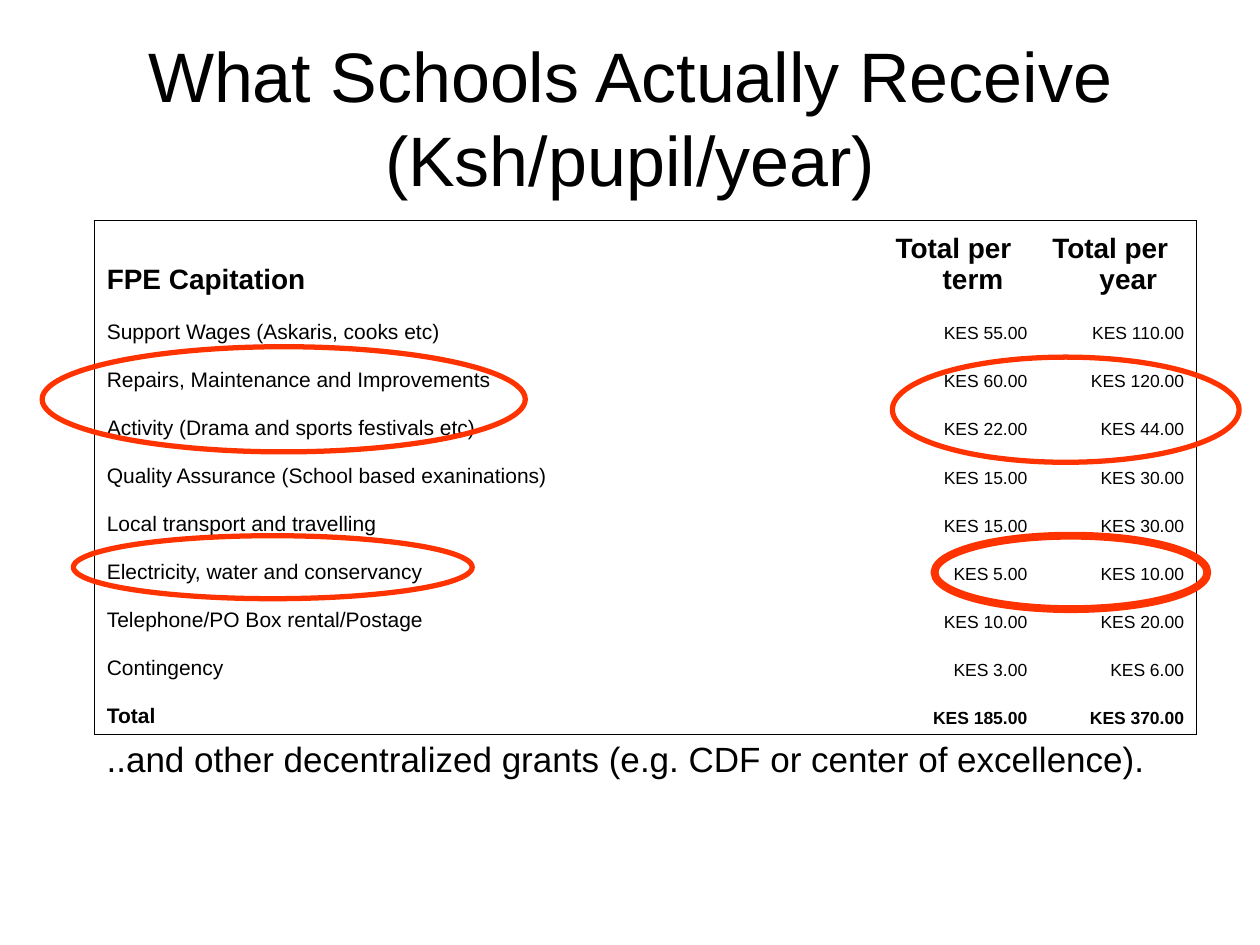
from lxml import etree
from pptx import Presentation
from pptx.dml.color import RGBColor
from pptx.enum.shapes import MSO_SHAPE
from pptx.enum.text import MSO_ANCHOR, PP_ALIGN
from pptx.oxml.ns import qn
from pptx.util import Cm, Pt

ELLIPSE = MSO_SHAPE.OVAL
LEFT, CENTER, RIGHT = PP_ALIGN.LEFT, PP_ALIGN.CENTER, PP_ALIGN.RIGHT
MIDDLE, BOTTOM = MSO_ANCHOR.MIDDLE, MSO_ANCHOR.BOTTOM

FONT = "Arial"
BLACK = "000000"
RED = "FF3300"
TITLE = "What Schools Actually Receive (Ksh/pupil/year)"
NOTE = "..and other decentralized grants (e.g. CDF or center of excellence)."
HEADER = ("FPE Capitation", "Total per term", "Total per year")
CAPITATION = [
    ("Support Wages (Askaris, cooks etc)", 55, 110),
    ("Repairs, Maintenance and Improvements", 60, 120),
    ("Activity (Drama and sports festivals etc)", 22, 44),
    ("Quality Assurance (School based exaninations)", 15, 30),
    ("Local transport and travelling", 15, 30),
    ("Electricity, water and conservancy", 5, 10),
    ("Telephone/PO Box rental/Postage", 10, 20),
    ("Contingency", 3, 6),
    ("Total", 185, 370),
]
HIGHLIGHTS = [
    (0.85, 6.99, 9.74, 2.12, 3),
    (17.99, 7.2, 6.99, 2.12, 3),
    (1.48, 10.8, 8.04, 1.27, 3),
    (18.84, 10.8, 5.5, 1.48, 4.5),
]
COLUMN_WIDTHS = (15.9, 3.16, 3.16)
HEADER_HEIGHT, ROW_HEIGHT = 1.63, 0.97
TABLE_LEFT, TABLE_TOP = 1.9, 4.45
HANGING = 0.95


def color(value):
    return RGBColor.from_string(value)


def write(text_frame, text, size, align=LEFT, bold=False, hanging=0):
    text_frame.text = text
    paragraph = text_frame.paragraphs[0]
    paragraph.alignment = align
    if hanging:
        properties = paragraph._p.get_or_add_pPr()
        properties.set("marL", str(Cm(hanging)))
        properties.set("indent", str(-Cm(hanging)))
    font = paragraph.runs[0].font
    font.name, font.size, font.bold = FONT, Pt(size), bold
    font.color.rgb = color(BLACK)
    return paragraph


def set_borders(cell, visible_sides):
    properties = cell._tc.get_or_add_tcPr()
    for index, side in enumerate("LRTB"):
        line = etree.Element(qn(f"a:ln{side}"), w=str(Pt(1)))
        if side in visible_sides:
            fill = etree.SubElement(line, qn("a:solidFill"))
            etree.SubElement(fill, qn("a:srgbClr"), val=BLACK)
        else:
            etree.SubElement(line, qn("a:noFill"))
        properties.insert(index, line)


def add_capitation_table(slide):
    rows = [HEADER] + [
        (label, f"KES {term:.2f}", f"KES {year:.2f}")
        for label, term, year in CAPITATION
    ]
    last_row, last_column = len(rows) - 1, len(HEADER) - 1
    table = slide.shapes.add_table(
        len(rows), len(HEADER), Cm(TABLE_LEFT), Cm(TABLE_TOP),
        Cm(sum(COLUMN_WIDTHS)), Cm(HEADER_HEIGHT + ROW_HEIGHT * last_row),
    ).table
    table.first_row = table.horz_banding = False
    for column, width in zip(table.columns, COLUMN_WIDTHS):
        column.width = Cm(width)
    for row_index, values in enumerate(rows):
        is_header = row_index == 0
        table.rows[row_index].height = Cm(HEADER_HEIGHT if is_header else ROW_HEIGHT)
        for column_index, value in enumerate(values):
            is_label = column_index == 0
            cell = table.cell(row_index, column_index)
            cell.fill.background()
            cell.vertical_anchor = BOTTOM
            write(
                cell.text_frame, value,
                size=16 if is_header else 12 if is_label else 10,
                align=LEFT if is_header or is_label else RIGHT,
                bold=row_index in (0, last_row),
                hanging=HANGING,
            )
            edges = {
                "L": is_label,
                "R": column_index == last_column,
                "T": is_header,
                "B": row_index == last_row,
            }
            set_borders(cell, [side for side, on_edge in edges.items() if on_edge])


def add_highlight(slide, left, top, width, height, weight):
    ellipse = slide.shapes.add_shape(ELLIPSE, Cm(left), Cm(top), Cm(width), Cm(height))
    ellipse.shadow.inherit = False
    ellipse.fill.background()
    ellipse.line.color.rgb = color(RED)
    ellipse.line.width = Pt(weight)


def main():
    presentation = Presentation()
    presentation.slide_width, presentation.slide_height = Cm(25.4), Cm(19.05)
    slide = presentation.slides.add_slide(presentation.slide_layouts[5])

    title = slide.shapes.title
    title.left, title.top, title.width, title.height = Cm(1.27), Cm(0.76), Cm(22.86), Cm(3.18)
    title.text_frame.vertical_anchor = MIDDLE
    write(title.text_frame, TITLE, 40, CENTER)

    note = slide.shapes.add_textbox(Cm(TABLE_LEFT), Cm(14.83), Cm(22.22), Cm(1.25))
    note.text_frame.word_wrap = True
    write(note.text_frame, NOTE, 20, hanging=HANGING).line_spacing = 0.9

    add_capitation_table(slide)
    for highlight in HIGHLIGHTS:
        add_highlight(slide, *highlight)
    presentation.save("out.pptx")


if __name__ == "__main__":
    main()
